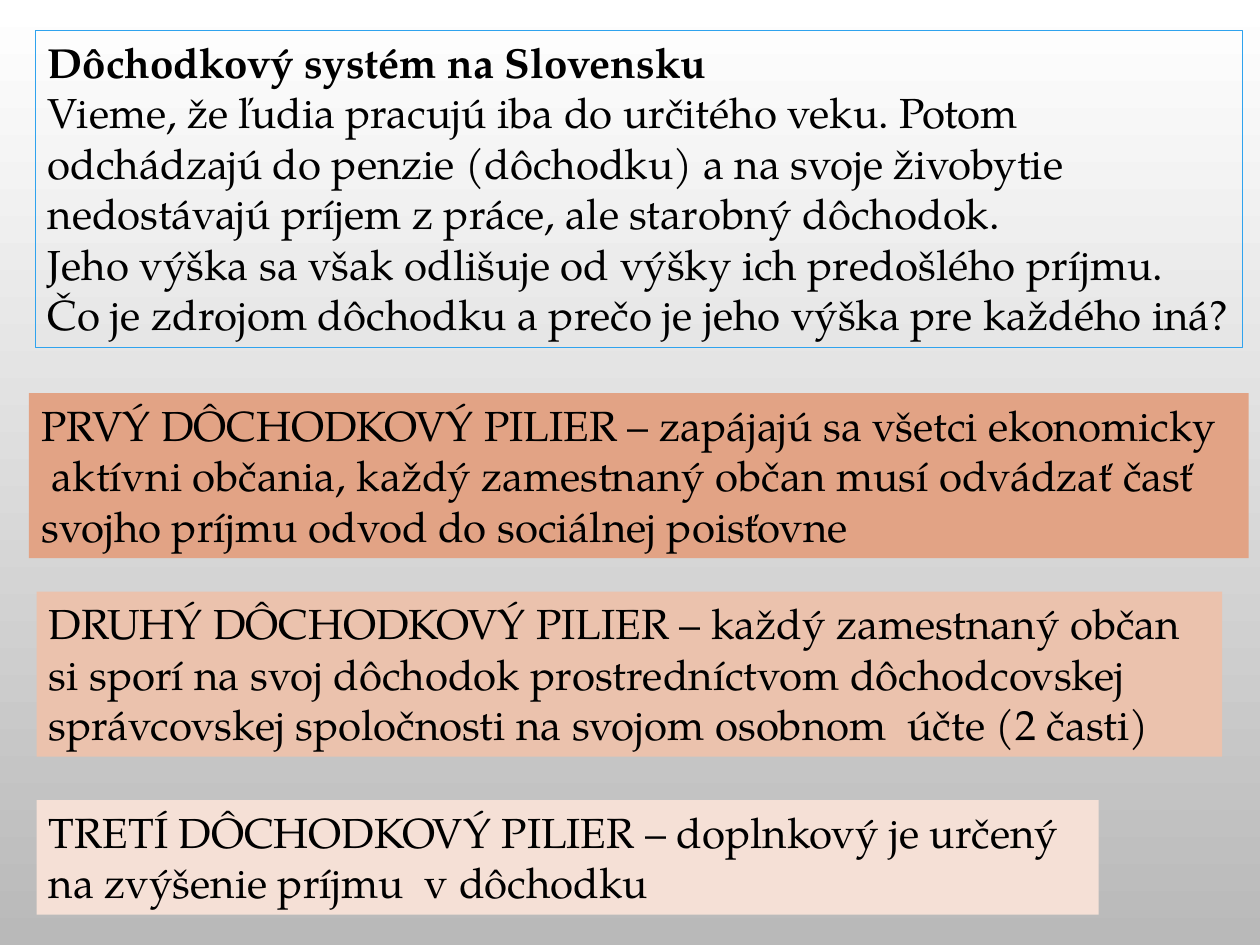
from pptx import Presentation
from pptx.dml.color import RGBColor
from pptx.enum.text import MSO_AUTO_SIZE as AutoSize
from pptx.util import Inches, Pt

WHITE = RGBColor(0xFF, 0xFF, 0xFF)
GREY = RGBColor(0xB9, 0xB9, 0xB9)
BLACK = RGBColor(0, 0, 0)
BLUE = RGBColor(0x2F, 0xA3, 0xEE)
DARK_PEACH = RGBColor(0xE2, 0xA3, 0x85)
PEACH = RGBColor(0xEB, 0xC2, 0xAD)
LIGHT_PEACH = RGBColor(0xF5, 0xE0, 0xD6)

WIDTH, HEIGHT = 10, 7.5  # inches

TITLE = "Dôchodkový systém na Slovensku"
INTRO = [
    "Vieme, že ľudia pracujú iba do určitého veku. Potom",
    "odchádzajú do penzie (dôchodku) a na svoje živobytie",
    "nedostávajú príjem z práce, ale starobný dôchodok.",
    "Jeho výška sa však odlišuje od výšky ich predošlého príjmu.",
    "Čo je zdrojom dôchodku a prečo je jeho výška pre každého iná?",
]
# Each pillar: left, top, width, height in percent of the slide, fill, lines
PILLARS = [
    ((2.3, 41.6, 96.8, 17.47), DARK_PEACH, [
        "PRVÝ DÔCHODKOVÝ PILIER – zapájajú sa všetci ekonomicky",
        " aktívni občania, každý zamestnaný občan musí odvádzať časť",
        "svojho príjmu odvod do sociálnej poisťovne",
    ]),
    ((2.9, 62.6, 94.1, 17.47), PEACH, [
        "DRUHÝ DÔCHODKOVÝ PILIER – každý zamestnaný občan",
        "si sporí na svoj dôchodok prostredníctvom dôchodcovskej",
        "správcovskej spoločnosti na svojom osobnom  účte (2 časti)",
    ]),
    ((2.9, 84.67, 84.3, 12.13), LIGHT_PEACH, [
        "TRETÍ DÔCHODKOVÝ PILIER – doplnkový je určený",
        "na zvýšenie príjmu  v dôchodku",
    ]),
]


class PensionSlide:
    font = "TeX Gyre Pagella"
    size = Pt(24)

    def __init__(self, deck):
        self.page = deck.slides.add_slide(deck.slide_layouts[6])

    def background(self, top_color, bottom_color):
        fill = self.page.background.fill
        fill.gradient()
        fill.gradient_angle = 270  # counter-clockwise, so top to bottom
        for stop, position, color in zip(fill.gradient_stops, (0, 1),
                                         (top_color, bottom_color)):
            stop.position = position
            stop.color.rgb = color

    def text_box(self, area, lines, title=None, fill=None, outline=None):
        """Place lines in an area given in percent of the slide."""
        left, top, width, height = area
        box = self.page.shapes.add_textbox(
            Inches(WIDTH * left / 100), Inches(HEIGHT * top / 100),
            Inches(WIDTH * width / 100), Inches(HEIGHT * height / 100))
        if fill is not None:
            box.fill.solid()
            box.fill.fore_color.rgb = fill
        if outline is not None:
            box.line.color.rgb = outline
            box.line.width = Pt(0.75)
        frame = box.text_frame
        frame.word_wrap = False
        frame.auto_size = AutoSize.SHAPE_TO_FIT_TEXT
        para = frame.paragraphs[0]
        if title:
            self.span(para, title, bold=True)
            para = frame.add_paragraph()
        self.span(para, lines[0])
        for line in lines[1:]:
            self.span(frame.add_paragraph(), line)

    def span(self, para, text, bold=False):
        span = para.add_run()
        span.text = text
        span.font.name = self.font
        span.font.size = self.size
        span.font.bold = bold
        span.font.color.rgb = BLACK


def main():
    deck = Presentation()
    deck.slide_width, deck.slide_height = Inches(WIDTH), Inches(HEIGHT)
    slide = PensionSlide(deck)
    slide.background(WHITE, GREY)
    slide.text_box((2.8, 3.2, 95.8, 33.6), INTRO, title=TITLE, outline=BLUE)
    for area, color, lines in PILLARS:
        slide.text_box(area, lines, fill=color)
    deck.save("out.pptx")


if __name__ == "__main__":
    main()
